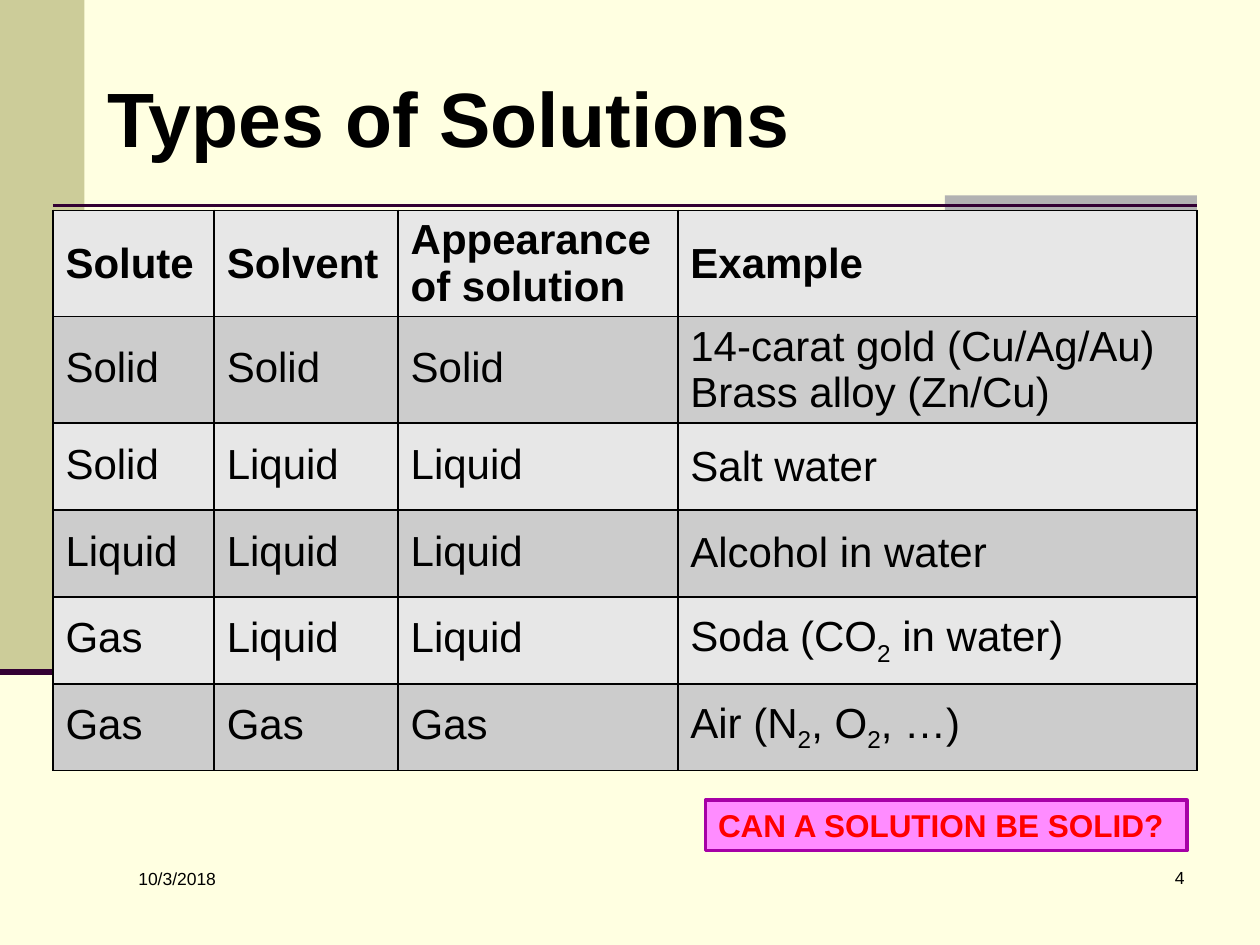
from lxml.etree import SubElement
from pptx import Presentation
from pptx.dml.color import RGBColor
from pptx.enum.shapes import MSO_CONNECTOR, MSO_SHAPE
from pptx.enum.text import MSO_ANCHOR, PP_ALIGN
from pptx.oxml.ns import qn
from pptx.util import Inches, Pt

BLACK, PURPLE = "000000", "330033"
ROW_FILLS = ("E7E7E7", "CCCCCC")
COLUMN_WIDTHS = (1.28, 1.46, 2.22, 4.12)
ROW_HEIGHT = 0.69
# Bars set off subscripts; a line break starts a new paragraph.
SOLUTIONS = [
    ("Solute", "Solvent", "Appearance of solution", "Example"),
    ("Solid", "Solid", "Solid", "14-carat gold (Cu/Ag/Au)\nBrass alloy (Zn/Cu)"),
    ("Solid", "Liquid", "Liquid", "Salt water"),
    ("Liquid", "Liquid", "Liquid", "Alcohol in water"),
    ("Gas", "Liquid", "Liquid", "Soda (CO|2| in water)"),
    ("Gas", "Gas", "Gas", "Air (N|2|, O|2|, …)"),
]


def rgb(color):
    return RGBColor.from_string(color)


def write(frame, text, size, color=BLACK, bold=False, align=PP_ALIGN.LEFT,
          anchor=MSO_ANCHOR.TOP, spacing=None):
    """Fill a text frame; every second part between bars is a subscript."""
    frame.word_wrap = True
    frame.vertical_anchor = anchor
    for index, line in enumerate(text.split("\n")):
        paragraph = frame.add_paragraph() if index else frame.paragraphs[0]
        paragraph.alignment = align
        paragraph.line_spacing = spacing
        for part_index, part in enumerate(line.split("|")):
            run = paragraph.add_run()
            run.text = part
            run.font.name = "Arial"
            run.font.size = Pt(size)
            run.font.bold = bold
            run.font.color.rgb = rgb(color)
            if part_index % 2:
                run._r.get_or_add_rPr().set("baseline", "-25000")


def add_box(slide, left, top, width, height, fill, line=None):
    box = slide.shapes.add_shape(MSO_SHAPE.RECTANGLE, Inches(left), Inches(top),
                                 Inches(width), Inches(height))
    box.shadow.inherit = False
    box.fill.solid()
    box.fill.fore_color.rgb = rgb(fill)
    if line:
        box.line.color.rgb = rgb(line)
        box.line.width = Pt(2)
    else:
        box.line.fill.background()
    return box


def add_rule(slide, left, right, y, weight):
    rule = slide.shapes.add_connector(MSO_CONNECTOR.STRAIGHT, Inches(left), Inches(y),
                                      Inches(right), Inches(y))
    rule.line.color.rgb = rgb(PURPLE)
    rule.line.width = Pt(weight)
    SubElement(rule._element.spPr, qn("a:effectLst"))


def add_label(slide, left, top, width, height, text, **text_format):
    label = slide.shapes.add_textbox(Inches(left), Inches(top), Inches(width), Inches(height))
    write(label.text_frame, text, **text_format)


def add_borders(cell):
    properties = cell._tc.get_or_add_tcPr()
    for side in ("lnL", "lnR", "lnT", "lnB"):
        border = SubElement(properties, qn(f"a:{side}"), w=str(Pt(1)))
        fill = SubElement(border, qn("a:solidFill"))
        SubElement(fill, qn("a:srgbClr"), val=BLACK)


def add_solutions_table(slide):
    table = slide.shapes.add_table(
        len(SOLUTIONS), len(COLUMN_WIDTHS), Inches(0.42), Inches(1.67),
        Inches(sum(COLUMN_WIDTHS)), Inches(ROW_HEIGHT * len(SOLUTIONS))).table
    for column, width in zip(table.columns, COLUMN_WIDTHS):
        column.width = Inches(width)
    for row_index, entries in enumerate(SOLUTIONS):
        table.rows[row_index].height = Inches(ROW_HEIGHT)
        is_header = row_index == 0
        for column_index, entry in enumerate(entries):
            cell = table.cell(row_index, column_index)
            is_example = column_index == len(entries) - 1
            add_borders(cell)
            cell.fill.solid()
            cell.fill.fore_color.rgb = rgb(ROW_FILLS[row_index % 2])
            write(cell.text_frame, entry, size=24, bold=is_header,
                  spacing=None if is_header or is_example else 0.9)
            cell.vertical_anchor = MSO_ANCHOR.MIDDLE


def add_title(slide, text):
    title = slide.shapes.title
    title.left, title.top = Inches(0.75), Inches(0.3)
    title.width, title.height = Inches(8.5), Inches(1.25)
    write(title.text_frame, text, size=44, bold=True, anchor=MSO_ANCHOR.MIDDLE)


def main():
    presentation = Presentation()
    presentation.slide_width, presentation.slide_height = Inches(10), Inches(7.5)
    slide = presentation.slides.add_slide(presentation.slide_layouts[5])
    slide.background.fill.solid()
    slide.background.fill.fore_color.rgb = rgb("FFFFE1")

    add_box(slide, 0, 0, 0.67, 5.33, "CCCC99")
    add_box(slide, 7.5, 1.55, 2, 0.2, "B2B2B2")
    add_rule(slide, 0.42, 9.5, 1.63, 1.5)
    add_rule(slide, 0, 0.67, 5.33, 3.5)
    add_title(slide, "Types of Solutions")
    add_solutions_table(slide)

    question = add_box(slide, 5.6, 6.35, 3.82, 0.4, "FF8CFF", line="A600A6")
    write(question.text_frame, "CAN A SOLUTION BE SOLID?", size=18, color="FF0000", bold=True)
    add_label(slide, 1, 6.84, 2.17, 0.5, "10/3/2018", size=10)
    add_label(slide, 7.42, 6.83, 2.08, 0.5, "4", size=10, align=PP_ALIGN.RIGHT)

    presentation.save("out.pptx")


if __name__ == "__main__":
    main()
